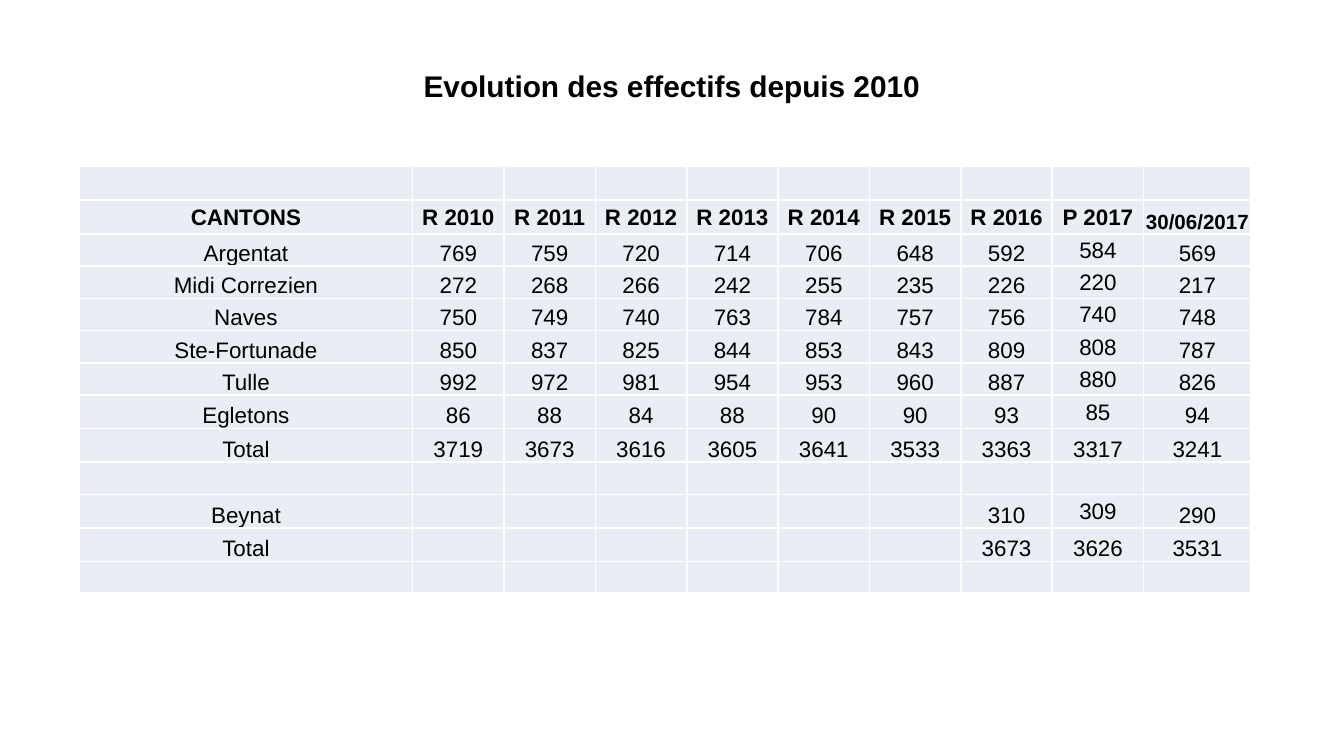
from lxml import etree
from pptx import Presentation
from pptx.dml.color import RGBColor
from pptx.enum.text import MSO_ANCHOR, PP_ALIGN
from pptx.oxml.ns import qn
from pptx.util import Inches, Pt

CENTER = PP_ALIGN.CENTER
TOP, MIDDLE, BOTTOM = MSO_ANCHOR.TOP, MSO_ANCHOR.MIDDLE, MSO_ANCHOR.BOTTOM
TITLE_ONLY = 5

COL_WIDTHS = [2.48] + [0.68] * 8 + [0.8]
ROW_HEIGHTS = [0.25] * 2 + [0.24] * 5 + [0.25] * 2 + [0.24] + [0.25] * 2 + [0.23]
HEADER_ROW, FORECAST_COL, DATE_COL = 1, 8, 9
BLANK = [""] * 10
ROWS = [
    BLANK,
    ["CANTONS", *(f"R {year}" for year in range(2010, 2017)), "P 2017", "30/06/2017"],
    ["Argentat", 769, 759, 720, 714, 706, 648, 592, 584, 569],
    ["Midi Correzien", 272, 268, 266, 242, 255, 235, 226, 220, 217],
    ["Naves", 750, 749, 740, 763, 784, 757, 756, 740, 748],
    ["Ste-Fortunade", 850, 837, 825, 844, 853, 843, 809, 808, 787],
    ["Tulle", 992, 972, 981, 954, 953, 960, 887, 880, 826],
    ["Egletons", 86, 88, 84, 88, 90, 90, 93, 85, 94],
    ["Total", 3719, 3673, 3616, 3605, 3641, 3533, 3363, 3317, 3241],
    BLANK,
    ["Beynat", *[""] * 6, 310, 309, 290],
    ["Total", *[""] * 6, 3673, 3626, 3531],
    BLANK,
]


def rgb(value):
    return RGBColor.from_string(value)


def write(p, text, size, bold):
    p.alignment = CENTER
    r = p.add_run()
    r.text = text
    for name, value in {"name": "Arial", "size": Pt(size), "bold": bold}.items():
        setattr(r.font, name, value)
    r.font.color.rgb = rgb("000000")


def add_borders(cell, color, width):
    tc_pr = cell._tc.get_or_add_tcPr()
    for i, side in enumerate(("lnL", "lnR", "lnT", "lnB")):
        ln = etree.Element(qn(f"a:{side}"), w=str(Pt(width)))
        fill = etree.SubElement(ln, qn("a:solidFill"))
        etree.SubElement(fill, qn("a:srgbClr"), val=color)
        tc_pr.insert(i, ln)


def add_title(slide, text, left, top, width, height):
    title = slide.shapes.title
    box = {"left": left, "top": top, "width": width, "height": height}
    for name, value in box.items():
        setattr(title, name, Inches(value))
    tf = title.text_frame
    tf.vertical_anchor = TOP
    write(tf.paragraphs[0], text, 16, True)


def cell_anchor(row, col):
    if row == HEADER_ROW:
        return BOTTOM if col == DATE_COL else MIDDLE
    is_forecast = col == FORECAST_COL and ROWS[row][0] != "Total"
    return MIDDLE if is_forecast else BOTTOM


def fill_cell(cell, row, col):
    cell.fill.solid()
    cell.fill.fore_color.rgb = rgb("E9EDF4")
    add_borders(cell, "FFFFFF", 1)
    margins = {"left": 0.01, "right": 0.01, "top": 0.01, "bottom": 0}
    for side, value in margins.items():
        setattr(cell, f"margin_{side}", Inches(value))
    cell.vertical_anchor = cell_anchor(row, col)
    p = cell.text_frame.paragraphs[0]
    text = str(ROWS[row][col])
    is_header = row == HEADER_ROW
    if text:
        write(p, text, 11 if is_header and col == DATE_COL else 12, is_header)
    else:
        # Keeps the default 18 pt from stretching an empty row
        p._p.get_or_add_endParaRPr().set("sz", "1200")


def add_headcount_table(slide, left, top):
    frame = slide.shapes.add_table(
        len(ROWS), len(COL_WIDTHS), Inches(left), Inches(top),
        Inches(sum(COL_WIDTHS)), Inches(sum(ROW_HEIGHTS)))
    table = frame.table
    table.first_row = table.horz_banding = False
    for column, width in zip(table.columns, COL_WIDTHS):
        column.width = Inches(width)
    for i, height in enumerate(ROW_HEIGHTS):
        table.rows[i].height = Inches(height)
        for j in range(len(COL_WIDTHS)):
            fill_cell(table.cell(i, j), i, j)


def main():
    prs = Presentation()
    prs.slide_width = Inches(10)
    prs.slide_height = prs.slide_width * 9 // 16
    slide = prs.slides.add_slide(prs.slide_layouts[TITLE_ONLY])
    add_title(slide, "Evolution des effectifs depuis 2010", 0.69, 0.45, 8.62, 0.47)
    add_headcount_table(slide, 0.59, 1.24)
    prs.save("out.pptx")


if __name__ == "__main__":
    main()
